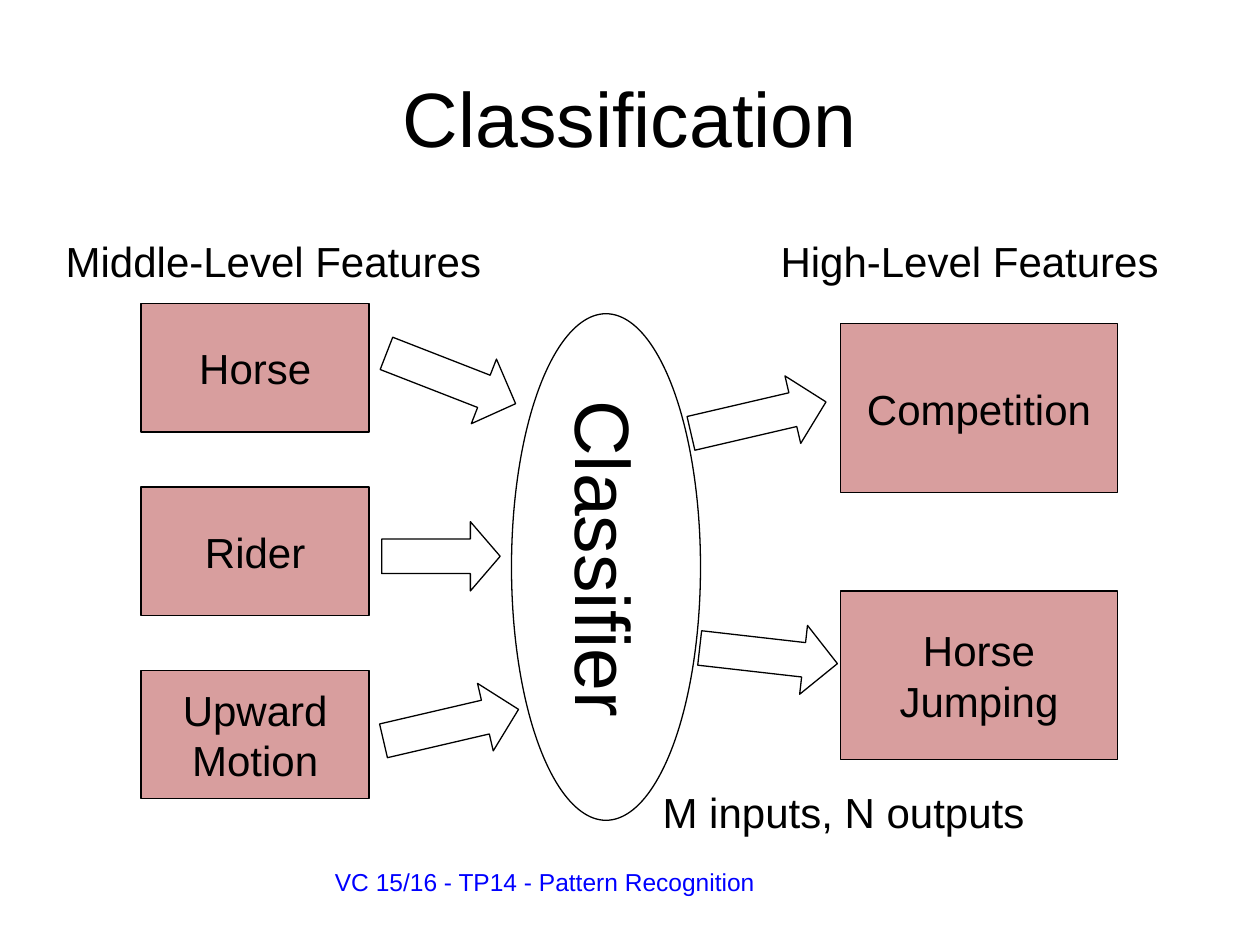
from lxml import etree
from pptx import Presentation
from pptx.dml.color import RGBColor
from pptx.enum import shapes, text
from pptx.oxml.ns import qn
from pptx.util import Inches, Pt

BLACK = RGBColor(0, 0, 0)
BLUE = RGBColor(0, 0, 255)
RED = RGBColor(0x99, 0, 0)
KIND = shapes.MSO_SHAPE
ALIGN = text.PP_ALIGN


def write(shape, lines, size=24, color=BLACK, align=ALIGN.CENTER,
          anchor=text.MSO_ANCHOR.MIDDLE, wrap=False):
    frame = shape.text_frame
    frame.word_wrap = wrap
    frame.vertical_anchor = anchor
    for i, line in enumerate(lines):
        para = frame.paragraphs[0] if i == 0 else frame.add_paragraph()
        para.alignment = align
        run = para.add_run()
        run.text = line
        run.font.name = "Arial"
        run.font.size = Pt(size)
        run.font.color.rgb = color


def add_label(slide, place, line, **style):
    box = slide.shapes.add_textbox(*map(Inches, place))
    write(box, [line], **style)


def add_form(slide, kind, place):
    form = slide.shapes.add_shape(kind, *map(Inches, place))
    form.shadow.inherit = False
    form.fill.background()
    form.line.color.rgb = BLACK
    form.line.width = Pt(0.75)
    return form


def add_box(slide, place, lines):
    box = add_form(slide, KIND.RECTANGLE, place)
    box.fill.solid()
    box.fill.fore_color.rgb = RED
    # Let the white page show through the red
    tint = box.fill._xPr.find(qn("a:solidFill"))[0]
    etree.SubElement(tint, qn("a:alpha")).set("val", "38000")
    write(box, lines)


def add_arrow(slide, left, top, width=1.1, turn=0):
    arrow = add_form(slide, KIND.RIGHT_ARROW, (left, top, width, 0.55))
    arrow.adjustments[1] = 0.27 / 0.55 if turn else 0.43
    arrow.rotation = turn


def main():
    deck = Presentation()
    deck.slide_width, deck.slide_height = Inches(10), Inches(7.5)
    slide = deck.slides.add_slide(deck.slide_layouts[6])

    # Footer and title
    add_label(slide, (2.56, 6.83, 6.14, 0.52),
              "VC 15/16 - TP14 - Pattern Recognition", size=14, color=BLUE,
              align=ALIGN.LEFT, anchor=text.MSO_ANCHOR.TOP, wrap=True)
    add_label(slide, (0.5, 0.3, 9, 1.25), "Classification", size=44, wrap=True)

    # Inputs
    for i, lines in enumerate((["Horse"], ["Rider"], ["Upward", "Motion"])):
        add_box(slide, (1.12, 2.41 + i * 1.455, 1.81, 1.02), lines)

    # Classifier
    oval = add_form(slide, KIND.OVAL, (4.06, 2.49, 1.5, 4.02))
    write(oval, ["Classifier"], size=44)
    oval.text_frame._txBody.bodyPr.set("vert", "eaVert")

    # Outputs
    for i, lines in enumerate((["Competition"], ["Horse", "Jumping"])):
        add_box(slide, (6.67, 2.57 + i * 2.12, 2.2, 1.34), lines)

    # Arrows into and out of the classifier
    add_arrow(slide, 3.03, 2.73, turn=21.3)
    add_arrow(slide, 3.03, 4.14, width=0.94)
    add_arrow(slide, 3.03, 5.48, turn=346.9)
    add_arrow(slide, 5.47, 3.04, turn=346.9)
    add_arrow(slide, 5.55, 4.93, turn=6.5)

    # Captions
    add_label(slide, (0.42, 1.82, 3.5, 0.5), "Middle-Level Features")
    add_label(slide, (6.09, 1.82, 3.21, 0.5), "High-Level Features")
    add_label(slide, (5.16, 6.19, 3.07, 0.5), "M inputs, N outputs")

    deck.save("out.pptx")


if __name__ == "__main__":
    main()
